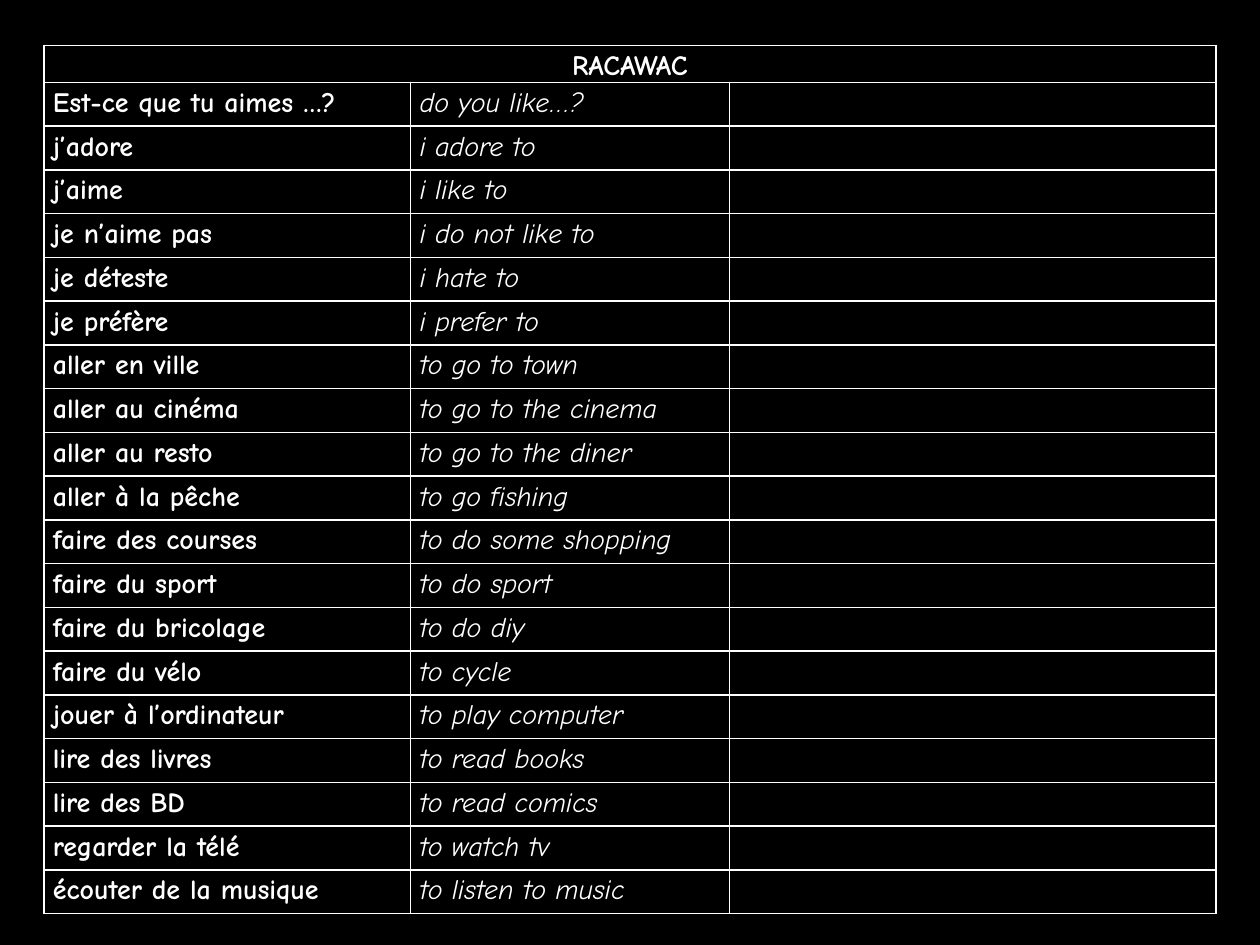
"""Build the RACAWAC vocabulary slide: French phrases, English meanings and a blank column."""
from lxml.etree import SubElement
from pptx import Presentation
from pptx.dml.color import RGBColor
from pptx.enum.text import PP_ALIGN
from pptx.oxml.ns import qn
from pptx.util import Inches, Pt

COLORS = {"background": "000000", "ink": "FFFFFF"}
FONT = "Comic Neue"
TITLE = "RACAWAC"
PHRASES = [
    ("Est-ce que tu aimes …?", "do you like…?"),
    ("j’adore", "i adore to"),
    ("j’aime", "i like to"),
    ("je n’aime pas", "i do not like to"),
    ("je déteste", "i hate to"),
    ("je préfère", "i prefer to"),
    ("aller en ville", "to go to town"),
    ("aller au cinéma", "to go to the cinema"),
    ("aller au resto", "to go to the diner"),
    ("aller à la pêche", "to go fishing"),
    ("faire des courses", "to do some shopping"),
    ("faire du sport", "to do sport"),
    ("faire du bricolage", "to do diy"),
    ("faire du vélo", "to cycle"),
    ("jouer à l’ordinateur", "to play computer"),
    ("lire des livres", "to read books"),
    ("lire des BD", "to read comics"),
    ("regarder la télé", "to watch tv"),
    ("écouter de la musique", "to listen to music"),
]
COLUMN_WIDTHS = [2.91, 2.53, 3.86]
TITLE_HEIGHT = Inches(0.25)
PHRASES_HEIGHT = Inches(6.6)


def write_cell(cell, text, bold=False, italic=False):
    p = cell.text_frame.paragraphs[0]
    p.text = text
    p.line_spacing = 1.15
    p.font.name = FONT
    p.font.size = Pt(16)
    p.font.bold = bold
    p.font.italic = italic
    p.font.color.rgb = RGBColor.from_string(COLORS["ink"])
    return p


def format_cell(cell):
    cell.margin_left = cell.margin_right = Inches(0.07)
    cell.margin_top = cell.margin_bottom = 0
    tc_pr = cell._tc.get_or_add_tcPr()
    for side in ("a:lnL", "a:lnR", "a:lnT", "a:lnB"):
        ln = SubElement(tc_pr, qn(side), w=str(Pt(1)))
        fill = SubElement(ln, qn("a:solidFill"))
        SubElement(fill, qn("a:srgbClr"), val=COLORS["ink"])
    cell.fill.background()


prs = Presentation()
prs.slide_width = Inches(10)
prs.slide_height = Inches(7.5)
s = prs.slides.add_slide(prs.slide_layouts[6])
s.background.fill.solid()
s.background.fill.fore_color.rgb = RGBColor.from_string(COLORS["background"])

table = s.shapes.add_table(
    len(PHRASES) + 1, len(COLUMN_WIDTHS),
    Inches(0.35), Inches(0.36), Inches(sum(COLUMN_WIDTHS)), TITLE_HEIGHT + PHRASES_HEIGHT,
).table
table.first_row = False
table.horz_banding = False

for column, width in zip(table.columns, COLUMN_WIDTHS):
    column.width = Inches(width)
for row in table.rows:
    row.height = PHRASES_HEIGHT // len(PHRASES)
table.rows[0].height = TITLE_HEIGHT

for cell in table.iter_cells():
    format_cell(cell)

title = table.cell(0, 0)
title.merge(table.cell(0, len(COLUMN_WIDTHS) - 1))
write_cell(title, TITLE, bold=True).alignment = PP_ALIGN.CENTER

for i, (french, english) in enumerate(PHRASES, start=1):
    write_cell(table.cell(i, 0), french, bold=True)
    write_cell(table.cell(i, 1), english, italic=True)

prs.save("out.pptx")
